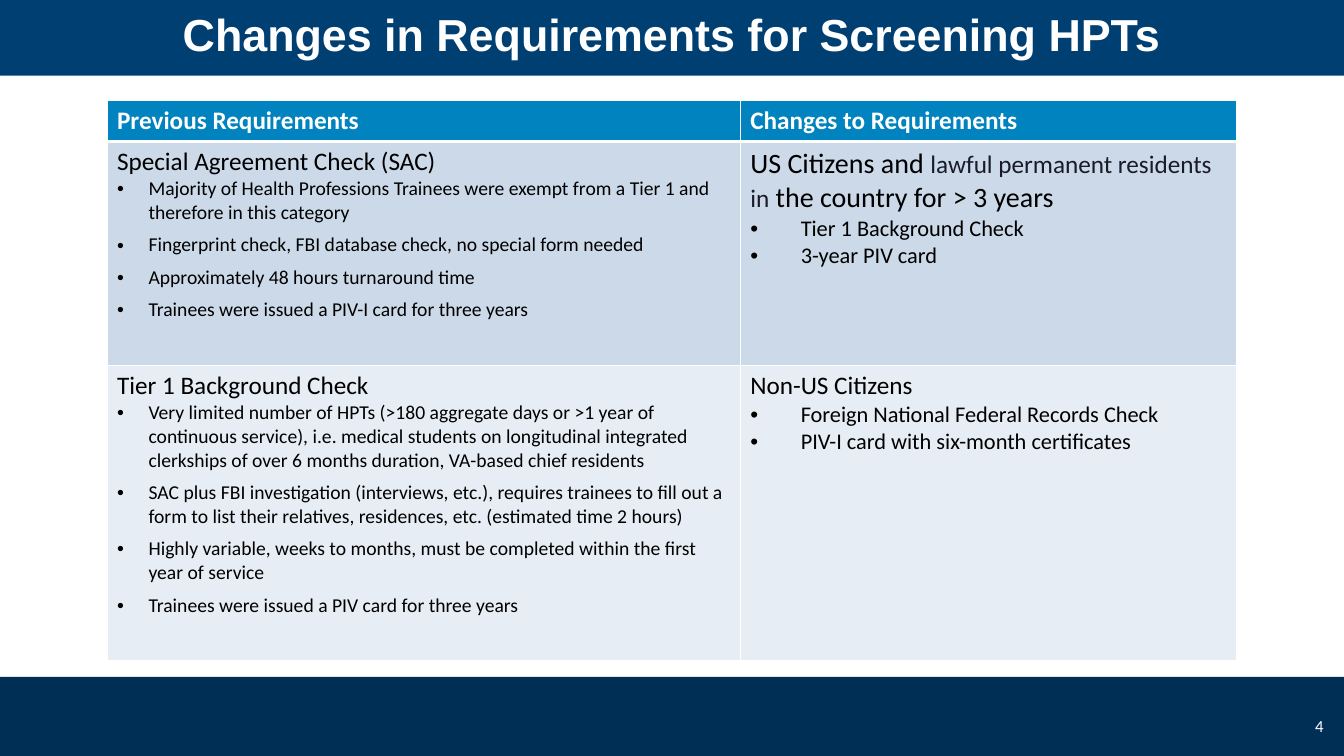
from lxml.etree import SubElement
from pptx import Presentation
from pptx.dml.color import RGBColor
from pptx.enum.shapes import MSO_SHAPE
from pptx.enum.text import MSO_ANCHOR, PP_ALIGN
from pptx.oxml.ns import qn
from pptx.util import Pt

COLORS = {
    "white": "FFFFFF", "black": "000000", "ink": "191B28",
    "title": "003F72", "footer": "002F56",
    "header": "0083BE", "upper": "CCD9E8", "lower": "E7EDF4",
}
# Bullet styles: text size, indent and space after
WIDE_LIST = {"size": 14, "indent": 22.5, "after": 6}
SHORT_LIST = {"size": 16, "indent": 36, "after": 0}


def rgb(name):
    return RGBColor.from_string(COLORS[name])


def add_run(para, text, size, color, bold=False, font="Calibri"):
    span = para.add_run()
    span.text = text
    formats = {"name": font, "size": Pt(size), "bold": bold}
    for key, value in formats.items():
        setattr(span.font, key, value)
    span.font.color.rgb = rgb(color)


deck = Presentation()
deck.slide_width, deck.slide_height = Pt(960), Pt(540)
page = deck.slides.add_slide(deck.slide_layouts[6])

# Title and footer bands
bands = {}
for name, top, height in [("footer", 483.5, 56.5), ("title", 0, 54)]:
    band = page.shapes.add_shape(MSO_SHAPE.RECTANGLE, 0, Pt(top), Pt(960), Pt(height))
    band.shadow.inherit = False
    band.fill.solid()
    band.fill.fore_color.rgb = rgb(name)
    band.line.fill.background()
    bands[name] = band

title_frame = bands["title"].text_frame
title_frame.vertical_anchor = MSO_ANCHOR.MIDDLE
title_frame.margin_top, title_frame.margin_bottom = Pt(3.6), Pt(9.6)
title_frame.paragraphs[0].alignment = PP_ALIGN.CENTER
add_run(title_frame.paragraphs[0], "Changes in Requirements for Screening HPTs",
        32, "white", True, "Arial")

# Page number
number_box = page.shapes.add_textbox(Pt(728.5), Pt(504), Pt(224), Pt(29))
number_box.text_frame.word_wrap = True
number_box.text_frame.vertical_anchor = MSO_ANCHOR.MIDDLE
number_para = number_box.text_frame.paragraphs[0]
number_para.alignment = PP_ALIGN.RIGHT
add_run(number_para, "4", 12, "white")

# Each cell: heading runs (text, size, color), bullet style, bullets
rows = [
    ("header", 29, [
        ([("Previous Requirements", 18, "white")], None, []),
        ([("Changes to Requirements", 18, "white")], None, []),
    ]),
    ("upper", 160, [
        ([("Special Agreement Check (SAC)", 18, "black")], WIDE_LIST, [
            "Majority of Health Professions Trainees were exempt from a Tier 1 and therefore in this category",
            "Fingerprint check, FBI database check, no special form needed",
            "Approximately 48 hours turnaround time",
            "Trainees were issued a PIV-I card for three years",
        ]),
        ([("US Citizens and ", 20, "black"),
          ("lawful permanent residents in", 18, "ink"),
          (" the country for > 3 years", 20, "black")], SHORT_LIST, [
            "Tier 1 Background Check",
            "3-year PIV card",
        ]),
    ]),
    ("lower", 211.2, [
        ([("Tier 1 Background Check", 18, "black")], WIDE_LIST, [
            "Very limited number of HPTs (>180 aggregate days or >1 year of continuous service), "
            "i.e. medical students on longitudinal integrated clerkships of over 6 months duration, "
            "VA-based chief residents",
            "SAC plus FBI investigation (interviews, etc.), requires trainees to fill out a form "
            "to list their relatives, residences, etc. (estimated time 2 hours)",
            "Highly variable, weeks to months, must be completed within the first year of service",
            "Trainees were issued a PIV card for three years",
        ]),
        ([("Non-US Citizens", 18, "black")], SHORT_LIST, [
            "Foreign National Federal Records Check",
            "PIV-I card with six-month certificates",
        ]),
    ]),
]
column_widths = [452.4, 354.6]
table = page.shapes.add_table(
    len(rows), len(column_widths), Pt(76.4), Pt(72), Pt(sum(column_widths)),
    Pt(sum(height for _, height, _ in rows))).table
for column, width in zip(table.columns, column_widths):
    column.width = Pt(width)

for row_index, (fill, height, cells) in enumerate(rows):
    table.rows[row_index].height = Pt(height)
    for column_index, (heading, style, bullets) in enumerate(cells):
        cell = table.cell(row_index, column_index)
        borders = {"lnL": 1, "lnR": 1,
                   "lnT": 3 if row_index == 1 else 1,
                   "lnB": 3 if row_index == 0 else 1}
        for tag, width in borders.items():
            line = SubElement(cell._tc.get_or_add_tcPr(), qn(f"a:{tag}"), w=str(Pt(width)))
            line_fill = SubElement(line, qn("a:solidFill"))
            SubElement(line_fill, qn("a:srgbClr"), val=COLORS["white"])
        cell.fill.solid()
        cell.fill.fore_color.rgb = rgb(fill)

        para = cell.text_frame.paragraphs[0]
        for text, size, color in heading:
            add_run(para, text, size, color, bold=fill == "header")
        for text in bullets:
            para = cell.text_frame.add_paragraph()
            para.space_after = Pt(style["after"])
            properties = para._p.get_or_add_pPr()
            properties.set("marL", str(Pt(style["indent"])))
            properties.set("indent", str(-Pt(style["indent"])))
            SubElement(properties, qn("a:buFont"), typeface="Arial")
            SubElement(properties, qn("a:buChar"), char="•")
            add_run(para, text, style["size"], "black")

deck.save("out.pptx")
